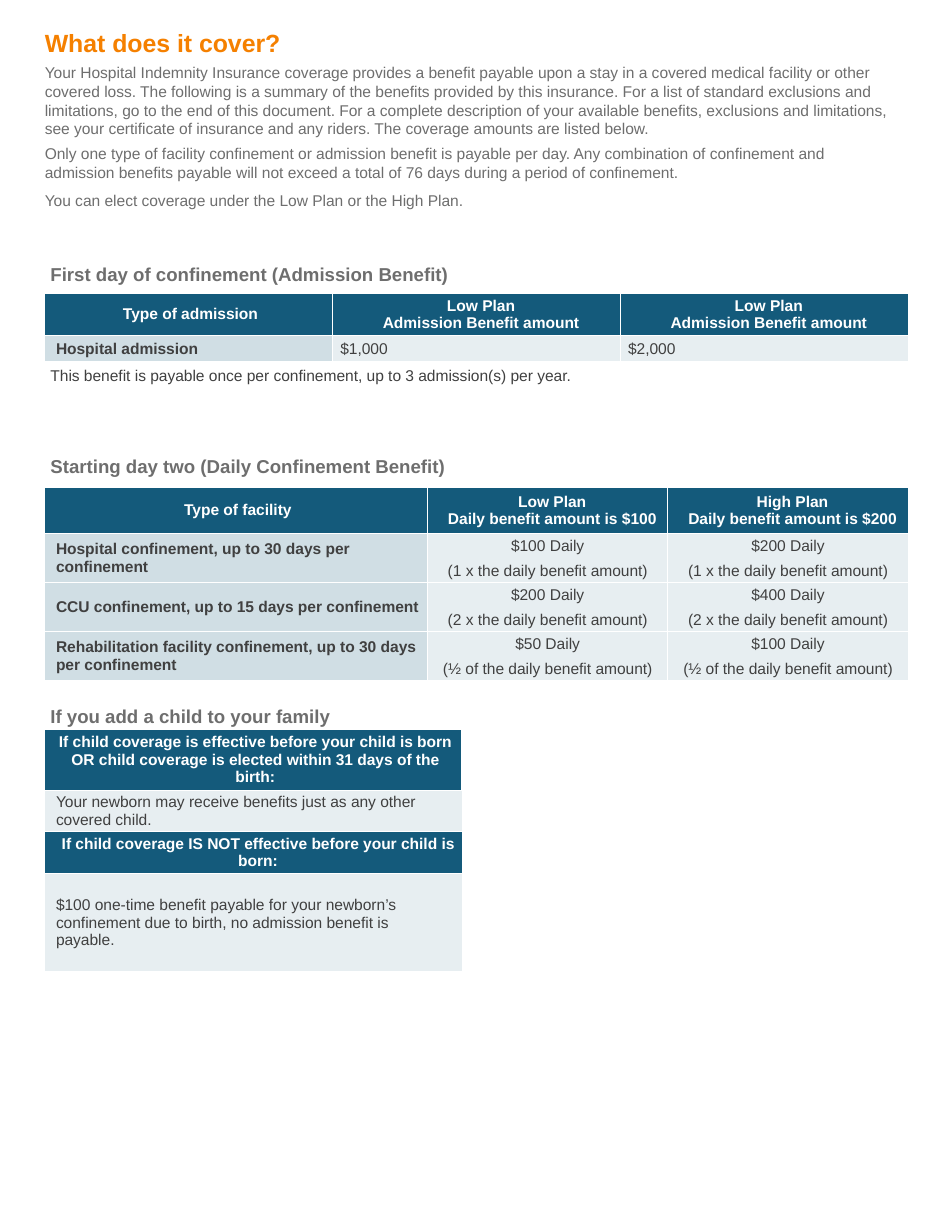
from copy import deepcopy
from pptx import Presentation
from pptx.dml.color import RGBColor as RGB
from pptx.enum.text import MSO_ANCHOR as Anchor, PP_ALIGN as Align
from pptx.oxml.ns import qn
from pptx.oxml.xmlchemy import OxmlElement as Elem
from pptx.util import Pt

HUE = {"orange": "F58000", "gray": "6E6E6E", "dark": "404040",
       "blue": "145A7B", "white": "FFFFFF"}
LEFT, WIDE = 28.8, 555

# Cell kinds: insets (left, top, right, bottom), opacity of the blue, text format
KIND = {
    "title": ((3.6, 1.4, 1.4, 1.4), 0,
              dict(size=12, hue="gray", bold=True, line=Pt(12))),
    "head": ((3.6, 1.4, 1.4, 1.4), 100,
             dict(hue="white", bold=True, align=Align.CENTER)),
    "label": ((3.6, 1.4, 0, 1.4), 20, dict(bold=True, indent=3.6, line=1.05)),
    "sum": ((5, 0, 5, 0), 10, dict(line=1.05, after=2)),
    "daily": ((5, 0, 5, 0), 10,
              dict(line=1.05, before=2, after=2, align=Align.CENTER)),
    "note": ((3.6, 1.4, 0, 1.4), 0, dict(line=1.05)),
    "case": ((3.6, 1.4, 7.2, 1.4), 10, dict(indent=3.6)),
    "tall": ((3.6, 7.2, 7.2, 7.2), 10, dict(indent=3.6, after=2)),
}


def write(frame, text, size=10, hue="dark", bold=False, align=Align.LEFT,
          line=None, before=0, after=0, indent=0):
    """Add one paragraph; a newline in the text is a line break."""
    first = not frame.text
    para = frame.paragraphs[0] if first else frame.add_paragraph()
    para.text = text
    para.alignment = align
    para.line_spacing = line
    para.space_before = Pt(0 if first else before)
    para.space_after = Pt(after)
    if indent:
        para._p.get_or_add_pPr().set("marL", str(Pt(indent)))
    for run in para.runs:
        font = run.font
        font.name, font.size, font.bold = "Arial", Pt(size), bold
        font.color.rgb = RGB.from_string(HUE[hue])
    for br in para._p.findall(qn("a:br")):
        br.insert(0, deepcopy(para.runs[0]._r.rPr))


class Page:
    def __init__(self, deck):
        self.slide = deck.slides.add_slide(deck.slide_layouts[6])

    def box(self, x, y, w, h):
        frame = self.slide.shapes.add_textbox(Pt(x), Pt(y), Pt(w), Pt(h)).text_frame
        frame.word_wrap = True
        frame.margin_left, frame.margin_right = 0, Pt(7.2)
        frame.margin_top = frame.margin_bottom = Pt(3.6)
        return frame

    def edge(self, cell, width):
        for side in "LRTB":
            line = Elem(f"a:ln{side}")
            line.set("w", str(Pt(width)))
            fill, tint = Elem("a:solidFill"), Elem("a:srgbClr")
            tint.set("val", HUE["white"])
            fill.append(tint)
            line.append(fill)
            cell._tc.get_or_add_tcPr().append(line)

    def cell(self, cell, kind, text):
        pads, tint, form = KIND[kind]
        (cell.margin_left, cell.margin_top,
         cell.margin_right, cell.margin_bottom) = map(Pt, pads)
        cell.vertical_anchor = Anchor.MIDDLE
        self.edge(cell, 1 if kind == "head" else 0.75)
        if tint:
            cell.fill.solid()
            cell.fill.fore_color.rgb = RGB.from_string(HUE["blue"])
            if tint < 100:
                alpha = Elem("a:alpha")
                alpha.set("val", str(tint * 1000))
                cell._tc.tcPr.find(qn("a:solidFill"))[0].append(alpha)
        else:
            cell.fill.background()
        for part in text if isinstance(text, tuple) else (text,):
            write(cell.text_frame, part, **form)

    def table(self, y, cols, rows):
        """Rows are (height, kinds, texts); a lone text spans its row."""
        high = sum(row[0] for row in rows)
        grid = self.slide.shapes.add_table(
            len(rows), len(cols), Pt(LEFT), Pt(y), Pt(sum(cols)), Pt(high)).table
        grid.first_row = grid.horz_banding = False
        for col, width in zip(grid.columns, cols):
            col.width = Pt(width)
        for r, (height, kinds, texts) in enumerate(rows):
            grid.rows[r].height = Pt(height)
            if len(texts) < len(cols):
                grid.cell(r, 0).merge(grid.cell(r, len(cols) - 1))
            for c, (kind, text) in enumerate(zip(kinds, texts)):
                self.cell(grid.cell(r, c), kind, text)


deck = Presentation()
deck.slide_width, deck.slide_height = Pt(612), Pt(792)
page = Page(deck)

# Introduction
intro = page.box(LEFT, 15.1, WIDE, 134)
write(intro, "What does it cover?", size=16, hue="orange", bold=True,
      line=Pt(18), after=3)
for text, gap in [
    ("Your Hospital Indemnity Insurance coverage provides a benefit payable upon a stay in a covered medical facility or other covered loss. The following is a summary of the benefits provided by this insurance. For a list of standard exclusions and limitations, go to the end of this document. For a complete description of your available benefits, exclusions and limitations, see your certificate of insurance and any riders. The coverage amounts are listed below.", 3),
    ("Only one type of facility confinement or admission benefit is payable per day. Any combination of confinement and admission benefits payable will not exceed a total of 76 days during a period of confinement.", 5),
    ("You can elect coverage under the Low Plan or the High Plan.", 5),
]:
    write(intro, text, hue="gray", line=Pt(12), before=1, after=gap)

# Admission benefit
KIND["plan"] = (*KIND["head"][:2], {**KIND["head"][2], "indent": 3.6})
heads = ["head", "plan", "plan"]
plan = "Low Plan\nAdmission Benefit amount"
page.table(166.3, [WIDE / 3] * 3, [
    (22.2, ["title"], ["First day of confinement (Admission Benefit)"]),
    (27.4, heads, ["Type of admission", plan, plan]),
    (16.4, ["label", "sum", "sum"], ["Hospital admission", "$1,000", "$2,000"]),
    (18.5, ["note"], ["This benefit is payable once per confinement, up to 3 admission(s) per year."]),
])

# Daily confinement benefit
rates = [
    ("Hospital confinement, up to 30 days per confinement", 100, 200, "1 x"),
    ("CCU confinement, up to 15 days per confinement", 200, 400, "2 x"),
    ("Rehabilitation facility confinement, up to 30 days per confinement", 50, 100, "½ of"),
]
page.table(288, [246, 154.5, 154.5], [
    (25.4, ["title"], ["Starting day two (Daily Confinement Benefit)"]),
    (29.6, heads, ["Type of facility"] + [
        f"{name} Plan\nDaily benefit amount is ${pay}"
        for name, pay in (("Low", 100), ("High", 200))]),
] + [
    (31.5, ["label", "daily", "daily"], [name] + [
        (f"${pay} Daily", f"({rate} the daily benefit amount)") for pay in (low, high)])
    for name, low, high, rate in rates
])

# Child coverage
page.table(454.3, [268.3], [
    (12.4, ["title"], ["If you add a child to your family"]),
    (31.7, ["head"], ["If child coverage is effective before your child is born OR child coverage is elected within 31 days of the birth:"]),
    (21.6, ["case"], ["Your newborn may receive benefits just as any other covered child."]),
    (21.6, ["plan"], ["If child coverage IS NOT effective before your child is born:"]),
    (63.2, ["tall"], ["$100 one-time benefit payable for your newborn’s confinement due to birth, no admission benefit is payable."]),
])

deck.save("out.pptx")
